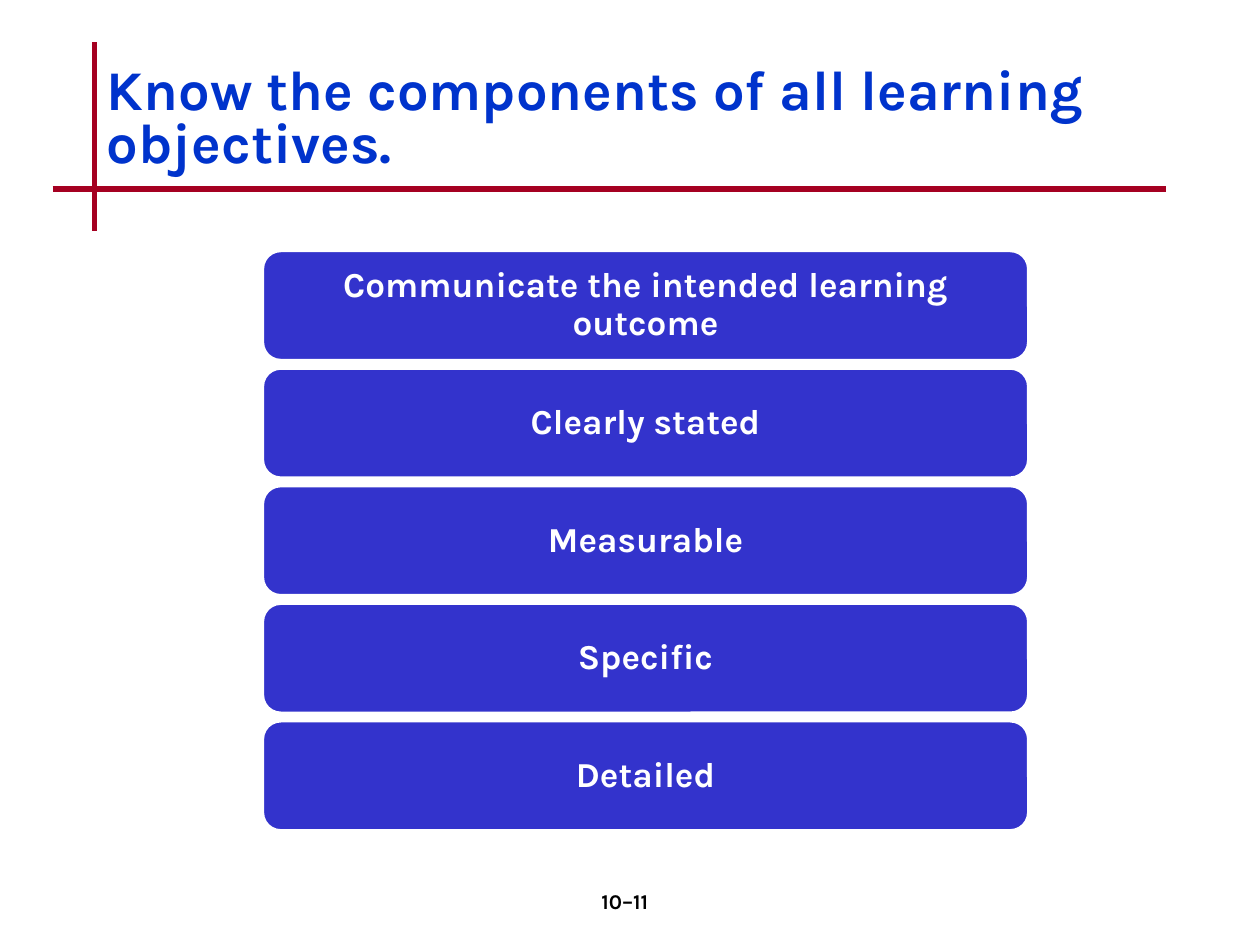
from dataclasses import dataclass

from lxml import etree
from pptx import Presentation
from pptx import util as u
from pptx.dml.color import RGBColor
from pptx.enum import shapes, text
from pptx.oxml import ns

RED = RGBColor(0xA5, 0x00, 0x21)
TITLE_BLUE = RGBColor(0x00, 0x33, 0xCC)
PANEL_BLUE = RGBColor(0x33, 0x33, 0xCC)
WHITE = RGBColor(0xFF, 0xFF, 0xFF)
BLACK = RGBColor(0x00, 0x00, 0x00)
FONT = "Karla"

PANEL_LEFT, PANEL_TOP = 5.29, 5.05
PANEL_WIDTH, PANEL_HEIGHT = 15.45, 2.22
PANEL_PITCH = 2.37
PANEL_INSET = u.Cm(0.21)


@dataclass
class Rule:
    x1: float
    y1: float
    x2: float
    y2: float


@dataclass
class Style:
    size: int
    color: RGBColor
    align: text.PP_ALIGN
    spacing: float = 1.0


RULES = [Rule(1.9, 0.85, 1.9, 4.66), Rule(1.06, 3.81, 23.5, 3.81)]
COMPONENTS = [
    "Communicate the intended learning outcome",
    "Clearly stated",
    "Measurable",
    "Specific",
    "Detailed",
]
TITLE_STYLE = Style(32, TITLE_BLUE, text.PP_ALIGN.LEFT, 0.8)
PANEL_STYLE = Style(20, WHITE, text.PP_ALIGN.CENTER, 0.9)
NUMBER_STYLE = Style(12, BLACK, text.PP_ALIGN.CENTER)


def write(box, wording: str, style: Style, anchor: text.MSO_ANCHOR) -> None:
    frame = box.text_frame
    frame.word_wrap = True
    frame.auto_size = text.MSO_AUTO_SIZE.NONE
    frame.vertical_anchor = anchor
    para = frame.paragraphs[0]
    para.alignment = style.align
    para.line_spacing = style.spacing
    para.space_before = u.Pt(0)
    span = para.add_run()
    span.text = wording
    span.font.name = FONT
    span.font.size = u.Pt(style.size)
    span.font.bold = True
    span.font.color.rgb = style.color


def draw_rule(page, rule: Rule) -> None:
    line = page.shapes.add_connector(
        shapes.MSO_CONNECTOR.STRAIGHT,
        u.Cm(rule.x1), u.Cm(rule.y1), u.Cm(rule.x2), u.Cm(rule.y2),
    )
    line.line.color.rgb = RED
    line.line.width = u.Pt(3)
    etree.SubElement(line.element.spPr, ns.qn("a:effectLst"))


def draw_panel(page, index: int, wording: str) -> None:
    panel = page.shapes.add_shape(
        shapes.MSO_SHAPE.ROUNDED_RECTANGLE,
        u.Cm(PANEL_LEFT), u.Cm(PANEL_TOP + index * PANEL_PITCH),
        u.Cm(PANEL_WIDTH), u.Cm(PANEL_HEIGHT),
    )
    panel.shadow.inherit = False
    panel.fill.solid()
    panel.fill.fore_color.rgb = PANEL_BLUE
    panel.line.color.rgb = WHITE
    panel.line.width = u.Pt(2)
    frame = panel.text_frame
    frame.margin_left = frame.margin_right = PANEL_INSET
    frame.margin_top = frame.margin_bottom = PANEL_INSET
    write(panel, wording, PANEL_STYLE, text.MSO_ANCHOR.MIDDLE)


def main() -> None:
    deck = Presentation()
    deck.slide_width, deck.slide_height = u.Cm(25.4), u.Cm(19.05)
    page = deck.slides.add_slide(deck.slide_layouts.get_by_name("Title Only"))

    for rule in RULES:
        draw_rule(page, rule)
    for index, wording in enumerate(COMPONENTS):
        draw_panel(page, index, wording)

    title = page.shapes.title
    title.left, title.top = u.Cm(1.9), u.Cm(0.85)
    title.width, title.height = u.Cm(21.59), u.Cm(3.17)
    write(title, "Know the components of all learning objectives.",
          TITLE_STYLE, text.MSO_ANCHOR.MIDDLE)

    number = page.shapes.add_textbox(u.Cm(9.95), u.Cm(17.78), u.Cm(5.29), u.Cm(1.27))
    write(number, "10–11", NUMBER_STYLE, text.MSO_ANCHOR.TOP)

    deck.save("out.pptx")


if __name__ == "__main__":
    main()
